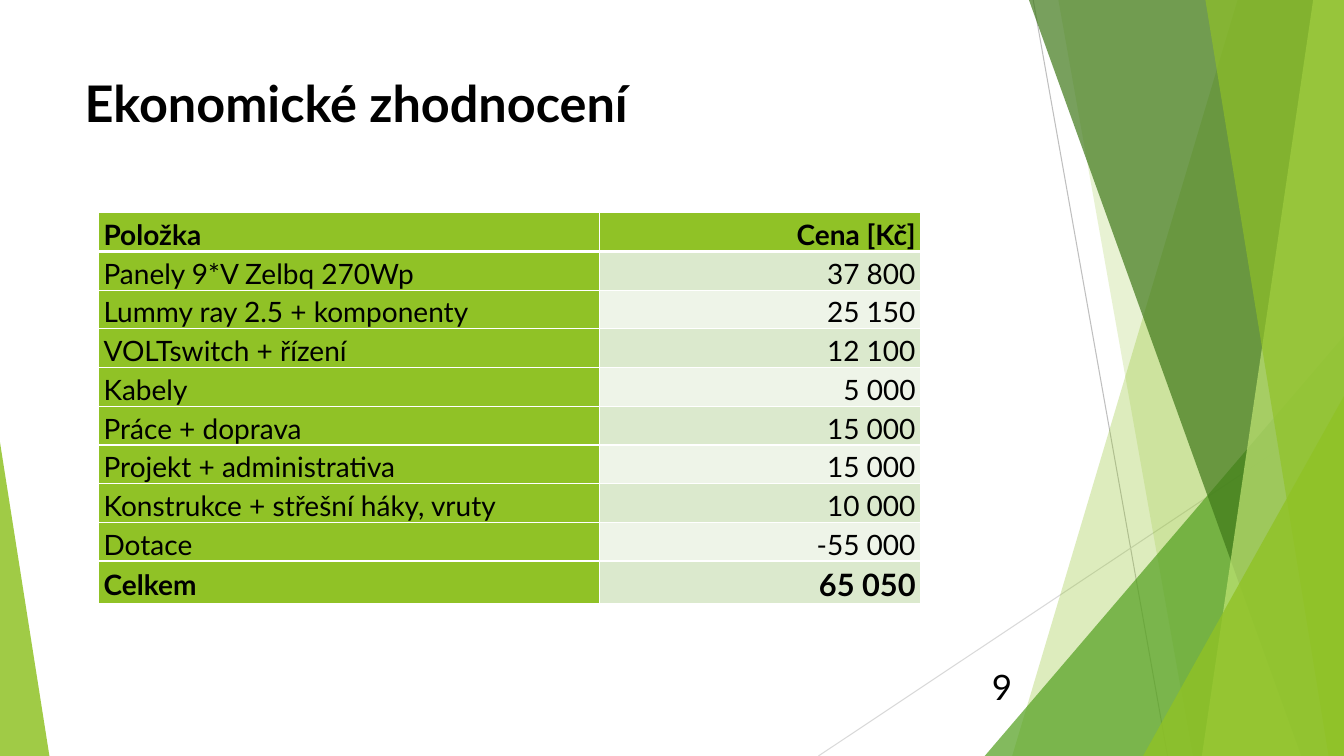
from lxml import etree
from pptx import Presentation
from pptx.dml.color import RGBColor
from pptx.enum.shapes import MSO_CONNECTOR, MSO_SHAPE
from pptx.enum.text import MSO_ANCHOR as ANCHOR, PP_ALIGN as ALIGN
from pptx.oxml import parse_xml
from pptx.oxml.ns import nsdecls, qn
from pptx.util import Pt

W, H = 960, 540
GREEN, WHITE, BLACK = "90C226", "FFFFFF", "000000"
BANDS = ("DBE9CD", "EEF4E8")
ROWS = [
    ("Položka", "Cena [Kč]"),
    ("Panely 9*V Zelbq 270Wp", "37 800"),
    ("Lummy ray 2.5 + komponenty", "25 150"),
    ("VOLTswitch + řízení", "12 100"),
    ("Kabely", "5 000"),
    ("Práce + doprava", "15 000"),
    ("Projekt + administrativa", "15 000"),
    ("Konstrukce + střešní háky, vruty", "10 000"),
    ("Dotace", "-55 000"),
    ("Celkem", "65 050"),
]


def rgb(color):
    """Turn a hex string into a colour."""
    return RGBColor.from_string(color)


def write(tf, text, size=20, bold=False, align=ALIGN.LEFT, spacing=1.0):
    """Write one formatted paragraph into a text frame."""
    tf.word_wrap = True
    p = tf.paragraphs[0]
    p.alignment = align
    p.line_spacing = spacing
    r = p.add_run()
    r.text = text
    r.font.name = "Lato"
    r.font.size = Pt(size)
    r.font.bold = bold
    r.font.color.rgb = rgb(BLACK)


def add_text(s, box, text, anchor=ANCHOR.TOP, **fmt):
    """Add a text box."""
    tf = s.shapes.add_textbox(*map(Pt, box)).text_frame
    tf.vertical_anchor = anchor
    write(tf, text, **fmt)


def paint(sp, color, opacity):
    """Give a shape a translucent fill without line or shadow."""
    sp.shadow.inherit = False
    sp.line.fill.background()
    sp.fill.solid()
    sp.fill.fore_color.rgb = rgb(color)
    clr = sp.fill._xPr.find(".//" + qn("a:srgbClr"))
    etree.SubElement(clr, qn("a:alpha")).set("val", str(opacity * 1000))


def add_line(s, start, end, color):
    """Add a thin straight line."""
    c = s.shapes.add_connector(MSO_CONNECTOR.STRAIGHT, *map(Pt, start + end))
    c.line.color.rgb = rgb(color)
    c.line.width = Pt(0.75)
    etree.SubElement(c._element.spPr, qn("a:effectLst"))


def add_blade(s, top_x, bottom_x, color, opacity):
    """Fill the slide from a slanted edge to its right side."""
    fb = s.shapes.build_freeform(Pt(top_x), 0)
    fb.add_line_segments([(Pt(x), Pt(y)) for x, y in ((W, 0), (W, H), (bottom_x, H))])
    paint(fb.convert_to_shape(), color, opacity)


def add_corner(s, box, peak, color, opacity):
    """Add a triangle whose peak lies at the given share of its width."""
    sp = s.shapes.add_shape(MSO_SHAPE.ISOSCELES_TRIANGLE, *map(Pt, box))
    sp.adjustments[0] = peak
    paint(sp, color, opacity)


def add_decoration(s):
    """Draw the facets at both sides of the slide."""
    add_line(s, (738, 0), (834, H), "BFBFBF")
    add_line(s, (W, 290), (584.6, H), "D9D9D9")
    add_blade(s, 884, 723, GREEN, 30)
    add_blade(s, 756, 852, GREEN, 20)
    add_corner(s, (703.4, 240, W - 703.4, 300), 1, "54A021", 72)
    add_blade(s, 735, 929.5, "3F7819", 70)
    add_blade(s, 938, 858.5, "C0E474", 70)
    add_blade(s, 861, 949, GREEN, 65)
    add_corner(s, (816.5, 283, W - 816.5, 257), 1, GREEN, 80)
    add_corner(s, (0, 316, 35.3, 224), 0, GREEN, 85)


def set_borders(cell, **widths):
    """Draw white borders of the given widths around a cell."""
    tcPr = cell._tc.get_or_add_tcPr()
    for side in "LRTB":
        tcPr.append(parse_xml(
            f'<a:ln{side} {nsdecls("a")} w="{Pt(widths.get(side, 1))}"><a:solidFill>'
            f'<a:srgbClr val="{WHITE}"/></a:solidFill></a:ln{side}>'))


def add_price_table(s, box, widths):
    """Add the table of items and prices."""
    table = s.shapes.add_table(len(ROWS), len(widths), *map(Pt, box)).table
    for col, width in zip(table.columns, widths):
        col.width = Pt(width)
    last = len(ROWS) - 1
    for i, row in enumerate(ROWS):
        table.rows[i].height = Pt(box[3] / len(ROWS))
        for j, text in enumerate(row):
            cell = table.cell(i, j)
            set_borders(cell, T=3 if i == 1 else 1, B=3 if i == 0 else 1)
            cell.fill.solid()
            cell.fill.fore_color.rgb = rgb(GREEN if i == 0 or j == 0 else BANDS[(i - 1) % 2])
            cell.margin_left = cell.margin_right = Pt(3.5)
            cell.margin_top = cell.margin_bottom = 0
            cell.vertical_anchor = ANCHOR.MIDDLE
            write(cell.text_frame, text, size=22 if (i, j) == (last, 1) else 20,
                  bold=i in (0, last), align=ALIGN.RIGHT if j else ALIGN.LEFT, spacing=1.15)


def main():
    """Build and save the slide."""
    prs = Presentation()
    prs.slide_width, prs.slide_height = Pt(W), Pt(H)
    s = prs.slides.add_slide(prs.slide_layouts[6])
    add_decoration(s)
    add_text(s, (53.3, 48.2, 677, 104), "Ekonomické zhodnocení", size=36, bold=True)
    add_price_table(s, (70.5, 152, 587, 274), (357.5, 229.5))
    add_text(s, (676, 476, 54, 29), "9", anchor=ANCHOR.MIDDLE, size=25, align=ALIGN.RIGHT)
    prs.save("out.pptx")


if __name__ == "__main__":
    main()
